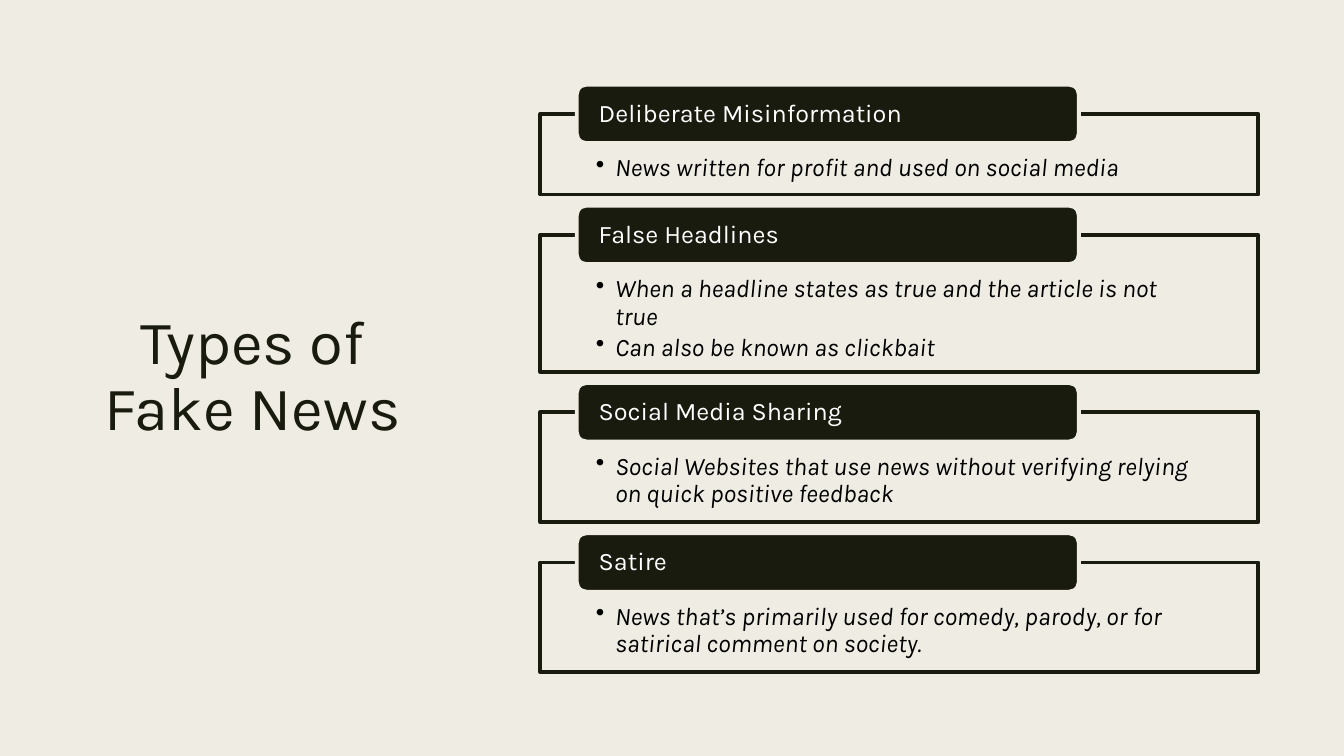
from lxml.etree import SubElement
from pptx import Presentation
from pptx.dml.color import RGBColor
from pptx.enum.shapes import MSO_SHAPE as Preset
from pptx.enum.text import MSO_ANCHOR as Anchor, PP_ALIGN as Align
from pptx.oxml.ns import qn
from pptx.util import Inches, Pt

COLORS = {"paper": "EFEDE3", "ink": "191B0E", "black": "000000", "white": "FFFFFF"}

# Heading, outline height, bullet texts
TYPES = [
    ("Deliberate Misinformation", 0.8,
     ["News written for profit and used on social media"]),
    ("False Headlines", 1.36,
     ["When a headline states as true and the article is not true",
      "Can also be known as clickbait"]),
    ("Social Media Sharing", 1.09,
     ["Social Websites that use news without verifying relying on quick positive feedback"]),
    ("Satire", 1.09,
     ["News that’s primarily used for comedy, parody, or for satirical comment on society."]),
]
FIRST_TOP, GAP, TAB_RISE = 1.13, 0.4, 0.29


def color(name):
    return RGBColor.from_string(COLORS[name])


def write(para, text, size=18, ink="black", italic=False, align=Align.LEFT,
          spacing=0.9, after=0, bullet=False):
    para.alignment, para.line_spacing, para.space_after = align, spacing, Pt(after)
    span = para.add_run()
    span.text = text
    span.font.name, span.font.size, span.font.italic = "Karla", Pt(size), italic
    span.font.color.rgb = color(ink)
    if bullet:
        props = para._p.get_or_add_pPr()
        props.set("marL", str(Inches(0.19)))
        props.set("indent", str(Inches(-0.19)))
        SubElement(props, qn("a:buChar")).set("char", "•")


class Page:
    def __init__(self, deck):
        self.slide = deck.slides.add_slide(deck.slide_layouts[6])
        background = self.slide.background.fill
        background.solid()
        background.fore_color.rgb = color("paper")

    def frame(self, shape, anchor, margins):
        frame = shape.text_frame
        frame.word_wrap, frame.vertical_anchor = True, anchor
        (frame.margin_left, frame.margin_top,
         frame.margin_right, frame.margin_bottom) = map(Inches, margins)
        return frame

    def title(self, text, *place):
        box = self.slide.shapes.add_textbox(*map(Inches, place))
        frame = self.frame(box, Anchor.MIDDLE, (0.1, 0.05, 0.1, 0.05))
        write(frame.paragraphs[0], text, size=44, ink="ink",
              align=Align.CENTER, spacing=0.89)

    def panel(self, preset, place, fill, line):
        box = self.slide.shapes.add_shape(preset, *map(Inches, place))
        box.shadow.inherit = False
        box.fill.solid()
        box.fill.fore_color.rgb = color(fill)
        box.line.color.rgb = color(line)
        box.line.width = Pt(2.75)
        return box

    def outline(self, bullets, *place):
        box = self.panel(Preset.RECTANGLE, place, "paper", "ink")
        frame = self.frame(box, Anchor.TOP, (0.55, 0.41, 0.55, 0.14))
        for index, text in enumerate(bullets):
            para = frame.add_paragraph() if index else frame.paragraphs[0]
            write(para, text, italic=True, after=2.7, bullet=True)

    def tab(self, heading, *place):
        box = self.panel(Preset.ROUNDED_RECTANGLE, place, "ink", "paper")
        frame = self.frame(box, Anchor.MIDDLE, (0.19, 0, 0.19, 0))
        write(frame.paragraphs[0], heading, ink="white")


def main():
    deck = Presentation()
    deck.slide_width, deck.slide_height = Inches(13.33), Inches(7.5)
    page = Page(deck)

    # Title on the left
    page.title("Types of Fake News", 0.7, 0.7, 3.61, 6.1)

    # Stacked outlines, each with a heading tab over its top edge
    top = FIRST_TOP
    for heading, height, bullets in TYPES:
        page.outline(bullets, 5.36, top, 7.12, height)
        page.tab(heading, 5.72, top - TAB_RISE, 4.98, 0.58)
        top += height + GAP

    deck.save("out.pptx")


if __name__ == "__main__":
    main()
